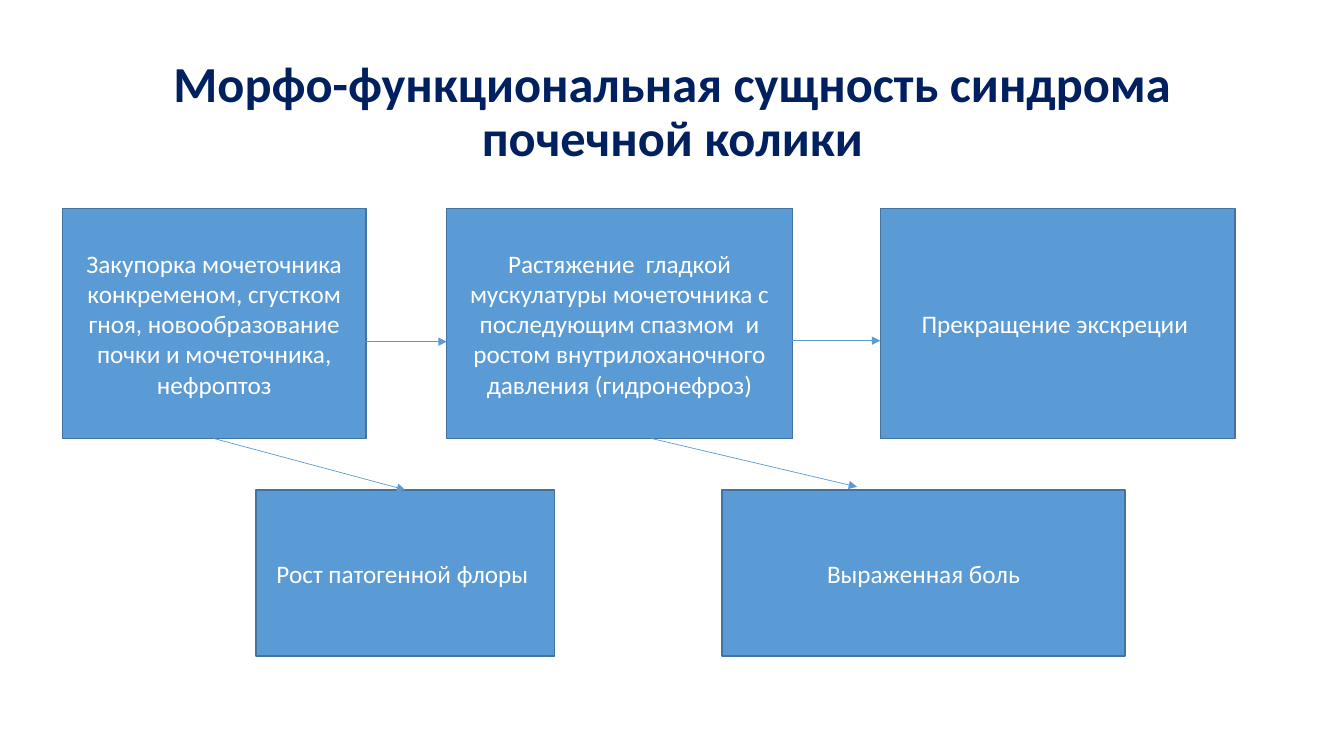
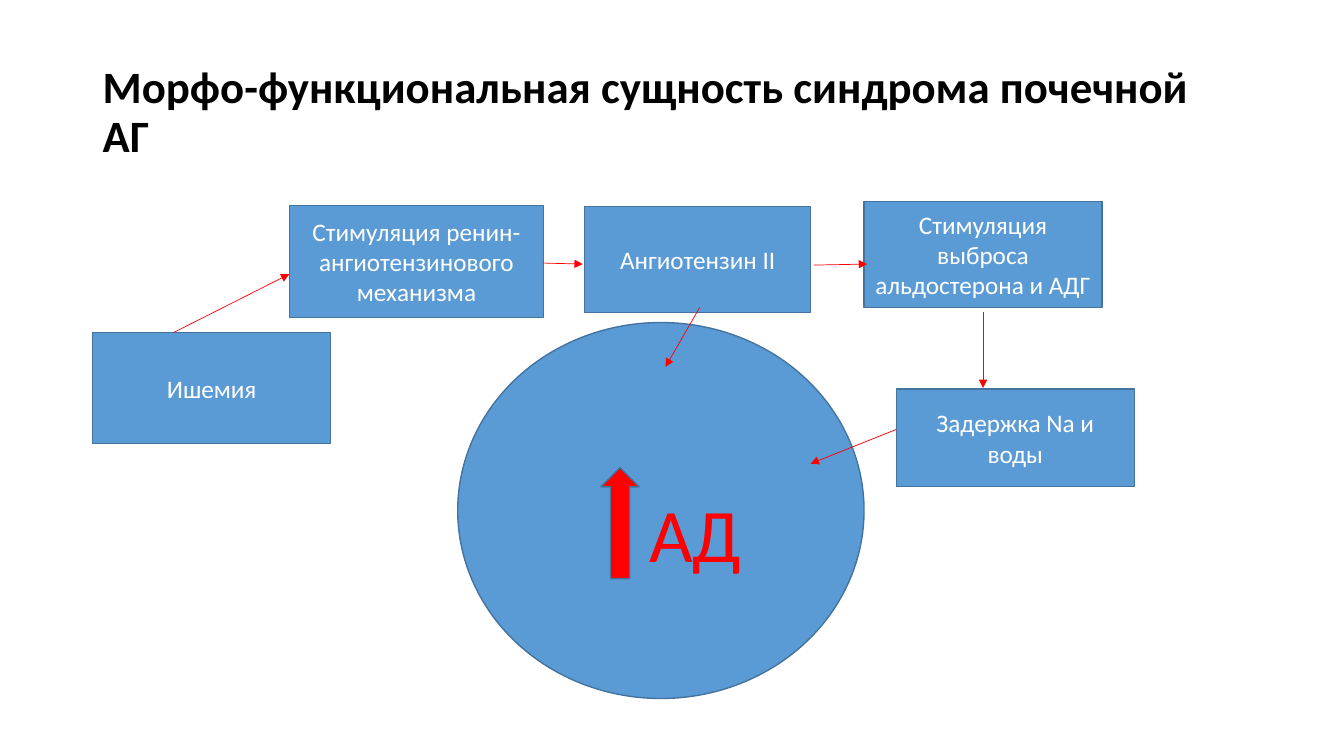
from dataclasses import dataclass

from lxml import etree
from pptx import Presentation
from pptx.dml.color import RGBColor
from pptx.enum import shapes, text
from pptx.oxml.ns import qn
from pptx.util import Inches, Pt


@dataclass(frozen=True)
class Theme:
    font: str = "Calibri"
    navy: str = "002060"
    black: str = "000000"
    white: str = "FFFFFF"
    blue: str = "5B9BD5"
    outline: str = "43739E"
    red: str = "FF0000"
    body_size: int = 18
    colic_title_size: int = 36
    pressure_title_size: int = 32
    pressure_size: int = 54
    outline_width: float = 1
    arrow_width: float = 0.5


T = Theme()
SHAPE = shapes.MSO_SHAPE
ALIGN = text.PP_ALIGN


def rgb(color):
    return RGBColor.from_string(color)


def inches(*values):
    return [Inches(v) for v in values]


def write(sp, content, size, color, align, bold=False, spacing=None):
    tf = sp.text_frame
    tf.word_wrap = True
    tf.vertical_anchor = text.MSO_ANCHOR.MIDDLE
    tf.text = content
    for p in tf.paragraphs:
        p.alignment = align
        p.line_spacing = spacing
        for r in p.runs:
            r.font.name = T.font
            r.font.size = Pt(size)
            r.font.bold = bold
            r.font.color.rgb = rgb(color)


def add_text(s, at, content, size, color, align=ALIGN.LEFT, **style):
    sp = s.shapes.add_textbox(*inches(*at))
    write(sp, content, size, color, align, **style)


def add_title(s, content, size, color, align):
    add_text(s, (0.92, 0.4, 11.5, 1.45), content, size, color, align,
             bold=True, spacing=0.9)


def add_figure(s, kind, at, fill=T.blue):
    sp = s.shapes.add_shape(kind, *inches(*at))
    sp.shadow.inherit = False
    sp.fill.solid()
    sp.fill.fore_color.rgb = rgb(fill)
    sp.line.color.rgb = rgb(T.outline)
    sp.line.width = Pt(T.outline_width)
    return sp


def add_box(s, at, content):
    sp = add_figure(s, SHAPE.RECTANGLE, at)
    write(sp, content, T.body_size, T.white, ALIGN.CENTER)


def add_arrow(s, start, end, color):
    """Draw a thin straight line with a triangular head at its end."""
    line = s.shapes.add_connector(shapes.MSO_CONNECTOR.STRAIGHT,
                                  *inches(*start, *end))
    line.line.color.rgb = rgb(color)
    line.line.width = Pt(T.arrow_width)
    ln = line.line._get_or_add_ln()
    etree.SubElement(ln, qn("a:tailEnd"), type="triangle")
    etree.SubElement(ln.getparent(), qn("a:effectLst"))


def build_colic(s):
    add_title(s, "Морфо-функциональная сущность синдрома почечной колики",
              T.colic_title_size, T.navy, ALIGN.CENTER)
    causes = (2.07, 2.28)
    effects = (4.86, 1.65)
    for left, width, (top, height), content in (
        (0.62, 3.01, causes,
         "Закупорка мочеточника конкременом, сгустком\n"
         "гноя, новообразование почки и мочеточника, нефроптоз"),
        (4.43, 3.43, causes,
         "Растяжение  гладкой мускулатуры мочеточника с последующим спазмом  "
         "и ростом внутрилоханочного давления (гидронефроз)"),
        (8.73, 3.52, causes, "Прекращение экскреции "),
        (2.54, 2.96, effects, "Рост патогенной флоры "),
        (7.16, 4, effects, "Выраженная боль"),
    ):
        add_box(s, (left, top, width, height), content)
    for start, end in (
        ((3.63, 3.39), (4.43, 3.39)),
        ((7.86, 3.38), (8.73, 3.38)),
        ((2.12, 4.35), (4.02, 4.86)),
        ((6.46, 4.35), (8.5, 4.83)),
    ):
        add_arrow(s, start, end, T.blue)


def build_hypertension(s):
    add_title(s, "Морфо-функциональная сущность синдрома почечной АГ",
              T.pressure_title_size, T.black, ALIGN.LEFT)
    for at, content in (
        ((0.92, 3.3, 2.36, 1.1), "Ишемия"),
        ((2.87, 2.04, 2.52, 1.11), "Стимуляция ренин-ангиотензинового механизма"),
        ((5.8, 2.05, 2.24, 1.05), "Ангиотензин II"),
        ((8.57, 2, 2.36, 1.05), "Стимуляция выброса альдостерона и АДГ"),
        ((8.89, 3.86, 2.36, 0.97), "Задержка Na и воды"),
    ):
        add_box(s, at, content)
    add_figure(s, SHAPE.OVAL, (4.54, 3.2, 4.03, 3.73))
    add_figure(s, SHAPE.UP_ARROW, (5.96, 4.64, 0.38, 1.1), T.red)
    add_text(s, (6.34, 4.78, 1.38, 1.01), "АД", T.pressure_size, T.red)
    for start, end in (
        ((1.72, 3.3), (2.87, 2.72)),
        ((5.39, 2.61), (5.78, 2.62)),
        ((8.07, 2.63), (8.6, 2.62)),
        ((9.75, 3.1), (9.75, 3.85)),
        ((6.94, 3.05), (6.6, 3.64)),
        ((8.89, 4.26), (8.04, 4.6)),
    ):
        add_arrow(s, start, end, T.red)


def main():
    prs = Presentation()
    prs.slide_width, prs.slide_height = inches(13.33, 7.5)
    blank = prs.slide_layouts[6]
    for build in (build_colic, build_hypertension):
        build(prs.slides.add_slide(blank))
    prs.save("out.pptx")


if __name__ == "__main__":
    main()
